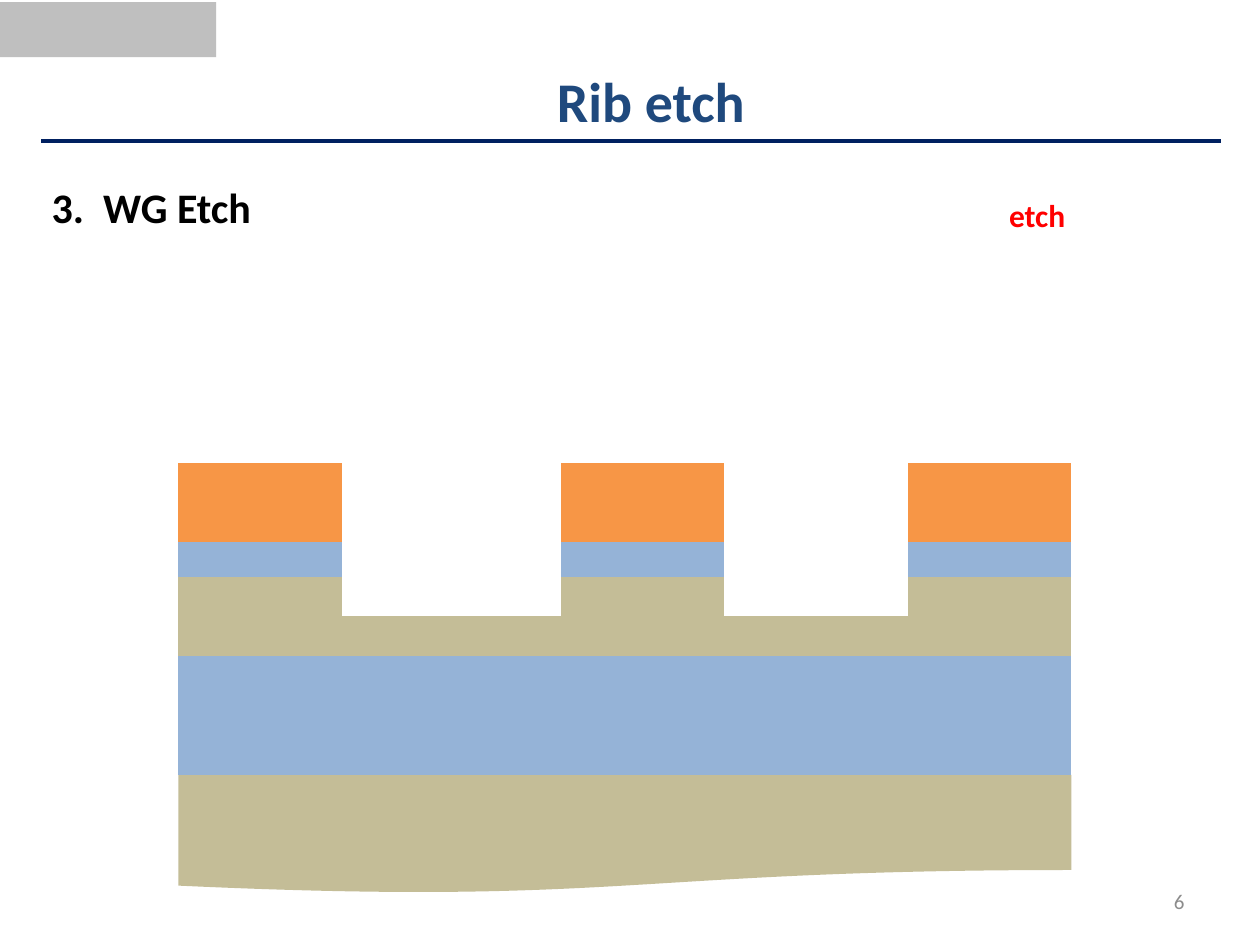
import pptx
import pptx.util
import pptx.dml.color
import pptx.enum.shapes
import pptx.enum.text
import lxml.etree

Pt = pptx.util.Pt
RGB = pptx.dml.color.RGBColor.from_string
SHAPE = pptx.enum.shapes.MSO_SHAPE
ALIGN = pptx.enum.text.PP_ALIGN
ANCHOR = pptx.enum.text.MSO_ANCHOR
NS = "{http://schemas.openxmlformats.org/drawingml/2006/main}"

colors = {
    "silicon": "C4BD97", "oxide": "95B3D7", "resist": "F79646",
    "title": "1F497D", "rule": "002060", "etch": "FF0000",
    "number": "8C8C8C", "black": "000000", "banner": "BFBFBF",
}


def write(sp, text, size, color, bold=False, align=ALIGN.LEFT,
          anchor=ANCHOR.TOP, wrap=True):
    tf = sp.text_frame
    tf.word_wrap = wrap
    tf.vertical_anchor = anchor
    p = tf.paragraphs[0]
    p.alignment = align
    r = p.add_run()
    r.text = text
    r.font.name = "Calibri"
    r.font.size = Pt(size)
    r.font.bold = bold
    r.font.color.rgb = RGB(colors[color])


def block(kind, x, y, w, h, color):
    sp = s.shapes.add_shape(kind, Pt(x), Pt(y), Pt(w), Pt(h))
    sp.shadow.inherit = False
    sp.line.fill.background()
    sp.fill.solid()
    sp.fill.fore_color.rgb = RGB(colors[color])


prs = pptx.Presentation()
prs.slide_width, prs.slide_height = Pt(720), Pt(540)
s = prs.slides.add_slide(prs.slide_layouts[6])

block(SHAPE.RECTANGLE, 0, 1.2, 123.6, 31.5, "banner")

rule = s.shapes.add_connector(pptx.enum.shapes.MSO_CONNECTOR.STRAIGHT,
                              Pt(23.6), Pt(80.6), Pt(697.6), Pt(80.6))
rule.line.color.rgb = RGB(colors["rule"])
rule.line.width = Pt(2)
lxml.etree.SubElement(rule._element.spPr, f"{NS}effectLst")

for text, x, y, w, h, fmt in [
    ("Rib etch", 84, 34.5, 576, 44,
     dict(size=32, color="title", bold=True, align=ALIGN.CENTER)),
    ("3.  WG Etch", 22.5, 100, 129.6, 36,
     dict(size=24, color="black", bold=True, wrap=False)),
    ("etch", 569.5, 108.7, 46.8, 29,
     dict(size=18, color="etch", bold=True, wrap=False)),
    ("6", 516, 500.5, 168, 28.8,
     dict(size=12, color="number", align=ALIGN.RIGHT, anchor=ANCHOR.MIDDLE)),
]:
    write(s.shapes.add_textbox(Pt(x), Pt(y), Pt(w), Pt(h)), text, **fmt)

left, width, rib_width = 102, 510.3, 93.6
for kind, y, h, color in [
    (SHAPE.FLOWCHART_DOCUMENT, 442.8, 67.8, "silicon"),
    (SHAPE.FLOWCHART_PROCESS, 375, 67.8, "oxide"),
    (SHAPE.FLOWCHART_PROCESS, 352.2, 22.8, "silicon"),
]:
    block(kind, left, y, width, h, color)

for y, h, color in [(264.4, 45.3, "resist"), (329.7, 45.3, "silicon"),
                    (309.7, 20, "oxide")]:
    for x in (left, 320.4, left + width - rib_width):
        block(SHAPE.FLOWCHART_PROCESS, x, y, rib_width, h, color)

prs.save("out.pptx")
